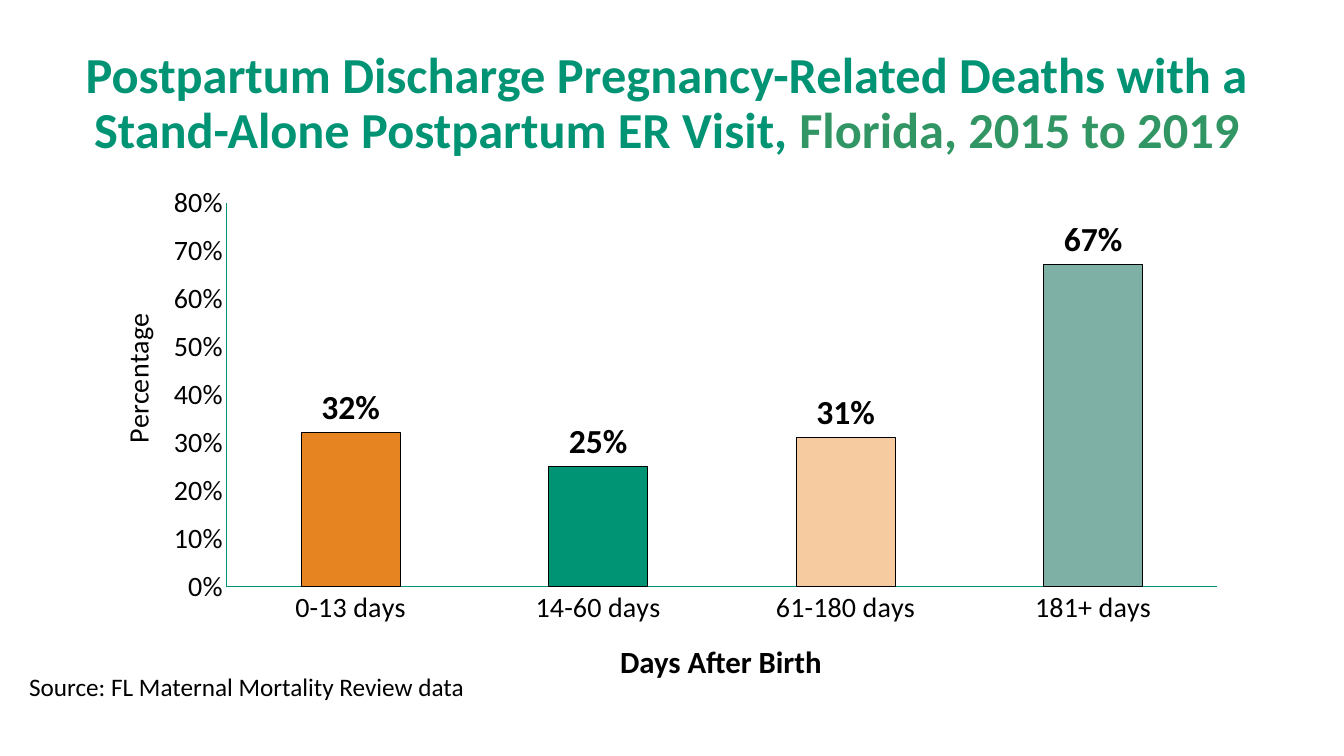
import pptx
import pptx.chart.data
import pptx.dml.color
import pptx.enum.chart
import pptx.enum.text
import pptx.oxml.ns
import pptx.util
from dataclasses import dataclass
from lxml import etree

# Content
TITLE = [("Postpartum Discharge Pregnancy-Related Deaths with a "
          "Stand-Alone Postpartum ER Visit, ", "009374"),
         ("Florida, 2015 to 2019", "329664")]
BARS = [("0-13 days", 0.32, "E68422"), ("14-60 days", 0.25, "009374"),
        ("61-180 days", 0.31, "F6CBA0"), ("181+ days", 0.67, "7EB0A6")]
VALUE_TITLE = "Percentage"
CATEGORY_TITLE = "Days After Birth"
SOURCE = "Source: FL Maternal Mortality Review data"

# Places in px, 100 to the inch: left, top, width, height
PAGE_SIZE = (1333, 750)
TITLE_BOX = (47, 52, 1229, 104)
CHART_BOX = (72, 176, 1204, 483)
CATEGORY_TITLE_BOX = (603, 633, 224, 47)
SOURCE_BOX = (19, 661, 481, 71)
# Places inside the chart
PLOT_BOX = (153, 25, 982, 381)
VALUE_TITLE_SPOT = (40, 130)


@dataclass(frozen=True)
class Theme:
    font: str = "Calibri"
    ink: str = "000000"
    axis: str = "009374"
    title: int = 36
    data_label: int = 24
    category_title: int = 22
    axis_text: int = 20
    source: int = 18
    line: float = 0.75


THEME = Theme()


def px(length):
    return pptx.util.Emu(length * 9144)


def rgb(code):
    return pptx.dml.color.RGBColor.from_string(code)


def style_font(font, size, color=THEME.ink, bold=False):
    font.name = THEME.font
    font.size = pptx.util.Pt(size)
    font.bold = bold
    font.color.rgb = rgb(color)


def add_text(para, text, *, align=None, **style):
    span = para.add_run()
    span.text = text
    style_font(span.font, **style)
    if align is not None:
        para.alignment = align


def style_line(line, color):
    line.color.rgb = rgb(color)
    line.width = pptx.util.Pt(THEME.line)


def place_in_chart(parent, index, spot):
    """Set a fixed layout, given in px within the chart."""
    tag = pptx.oxml.ns.qn
    for old in parent.findall(tag("c:layout")):
        parent.remove(old)
    layout = etree.Element(tag("c:layout"))
    manual = etree.SubElement(layout, tag("c:manualLayout"))
    settings = [("layoutTarget", "inner")] if len(spot) == 4 else []
    settings += [("xMode", "edge"), ("yMode", "edge")]
    sizes = CHART_BOX[2:] * 2
    settings += [(name, str(length / size))
                 for name, length, size in zip("xywh", spot, sizes)]
    for name, value in settings:
        etree.SubElement(manual, tag("c:" + name)).set("val", value)
    parent.insert(index, layout)


CENTER = pptx.enum.text.PP_ALIGN.CENTER
deck = pptx.Presentation()
deck.slide_width, deck.slide_height = map(px, PAGE_SIZE)
page = deck.slides.add_slide(deck.slide_layouts[5])

# Title
title = page.shapes.title
title.left, title.top, title.width, title.height = map(px, TITLE_BOX)
frame = title.text_frame
frame.word_wrap = True
frame.auto_size = pptx.enum.text.MSO_AUTO_SIZE.NONE
frame.vertical_anchor = pptx.enum.text.MSO_ANCHOR.MIDDLE
para = frame.paragraphs[0]
para.line_spacing = 0.9
for text, color in TITLE:
    add_text(para, text, align=CENTER, size=THEME.title, color=color, bold=True)

# Chart
labels, values, colors = zip(*BARS)
data = pptx.chart.data.CategoryChartData(number_format="0%")
data.categories = labels
data.add_series("Series 1", values)
chart = page.shapes.add_chart(
    pptx.enum.chart.XL_CHART_TYPE.COLUMN_CLUSTERED,
    *map(px, CHART_BOX), data).chart
chart.has_legend = False
chart.has_title = False
style_font(chart.font, THEME.axis_text)
plot = chart.plots[0]
plot.gap_width = 150
plot.vary_by_categories = False

# Bars and their labels
series = plot.series[0]
for index, color in enumerate(colors):
    bar = series.points[index].format
    bar.fill.solid()
    bar.fill.fore_color.rgb = rgb(color)
    style_line(bar.line, THEME.ink)
data_labels = series.data_labels
data_labels.show_value = True
data_labels.position = pptx.enum.chart.XL_LABEL_POSITION.OUTSIDE_END
data_labels.number_format = "0%"
data_labels.number_format_is_linked = False
style_font(data_labels.font, THEME.data_label, bold=True)

# Axes
for axis in (chart.category_axis, chart.value_axis):
    axis.has_major_gridlines = False
    axis.major_tick_mark = pptx.enum.chart.XL_TICK_MARK.NONE
    axis.minor_tick_mark = pptx.enum.chart.XL_TICK_MARK.NONE
    style_font(axis.tick_labels.font, THEME.axis_text)
    style_line(axis.format.line, THEME.axis)
value_axis = chart.value_axis
value_axis.minimum_scale, value_axis.maximum_scale = 0, 0.8
value_axis.major_unit = 0.1
value_axis.tick_labels.number_format = "0%"
value_axis.tick_labels.number_format_is_linked = False
value_title = value_axis.axis_title.text_frame
add_text(value_title.paragraphs[0], VALUE_TITLE, size=THEME.axis_text)

# Fixed places of the plot and the value axis title
chart_space = chart.element if hasattr(chart, "element") else chart._chartSpace
place_in_chart(chart_space.xpath(".//c:plotArea")[0], 0, PLOT_BOX)
title_element = chart_space.xpath(".//c:valAx/c:title")[0]
place_in_chart(title_element, 1, VALUE_TITLE_SPOT)
body = title_element.xpath(".//a:bodyPr")[0]
body.set("rot", "-5400000")
body.set("vert", "horz")

# Category title and source
for place, text, wrap, style in [
        (CATEGORY_TITLE_BOX, CATEGORY_TITLE, False,
         dict(size=THEME.category_title, bold=True, align=CENTER)),
        (SOURCE_BOX, SOURCE, True, dict(size=THEME.source))]:
    box = page.shapes.add_textbox(*map(px, place))
    box.text_frame.word_wrap = wrap
    add_text(box.text_frame.paragraphs[0], text, **style)

deck.save("out.pptx")
